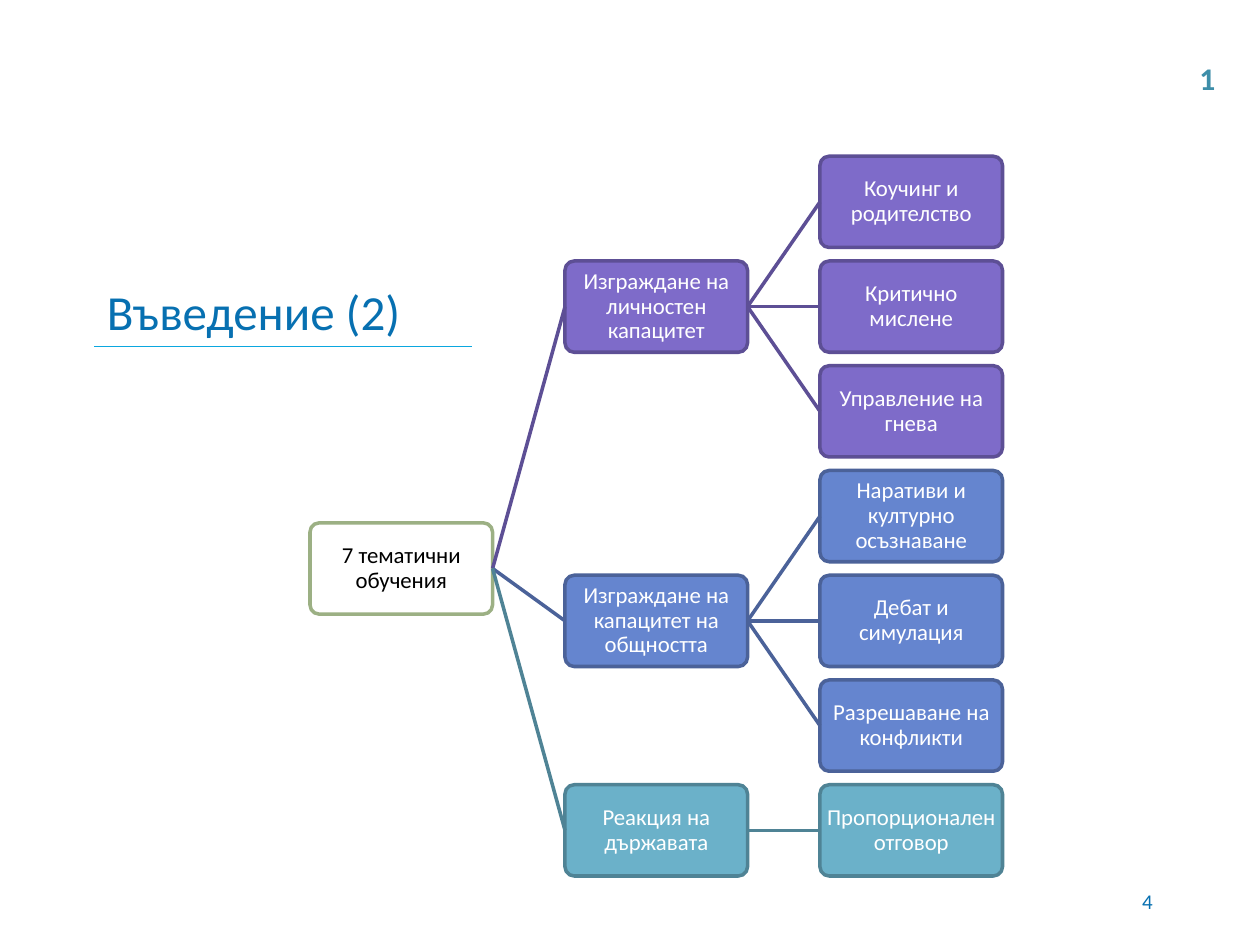
from dataclasses import dataclass

from lxml import etree
from pptx import Presentation
from pptx.dml.color import RGBColor
from pptx.enum.shapes import MSO_CONNECTOR, MSO_SHAPE
from pptx.enum.text import MSO_ANCHOR, MSO_AUTO_SIZE, PP_ALIGN
from pptx.oxml.ns import qn
from pptx.util import Cm, Pt

STRAIGHT = MSO_CONNECTOR.STRAIGHT
ROUNDED = MSO_SHAPE.ROUNDED_RECTANGLE
MIDDLE, BOTTOM = MSO_ANCHOR.MIDDLE, MSO_ANCHOR.BOTTOM
NO_AUTOFIT, FIT_SHAPE = MSO_AUTO_SIZE.NONE, MSO_AUTO_SIZE.SHAPE_TO_FIT_TEXT
LEFT, CENTER, RIGHT = PP_ALIGN.LEFT, PP_ALIGN.CENTER, PP_ALIGN.RIGHT
TITLE_ONLY = 5
LEFT_SIDE, RIGHT_SIDE = 1, 3


@dataclass(frozen=True)
class Theme:
    """Colours, type sizes and line widths of the slide."""
    font: str = "Calibri"
    title_color: str = "0770B1"
    rule_color: str = "0BA7DF"
    marker_color: str = "3E8EA9"
    root: tuple = ("FFFFFF", "9CB084", "000000")
    personal: tuple = ("7E6BC9", "5D4F95", "FFFFFF")
    community: tuple = ("6585CF", "4B6299", "FFFFFF")
    state: tuple = ("6BB1C9", "4F8395", "FFFFFF")
    title_size: float = 28
    marker_size: float = 18
    node_size: float = 13
    number_size: float = 12
    rule_width: float = 0.75
    node_width: float = 2


THEME = Theme()
ROOT_TEXT = "7 тематични обучения"
BRANCHES = [
    ("Изграждане на личностен капацитет", THEME.personal,
     ["Коучинг и родителство", "Критично мислене", "Управление на гнева"]),
    ("Изграждане на капацитет на общността", THEME.community,
     ["Наративи и културно осъзнаване", "Дебат и симулация",
      "Разрешаване на конфликти"]),
    ("Реакция на държавата", THEME.state, ["Пропорционален отговор"]),
]


def place(shape, box):
    """Move a shape to a box of left, top, width and height in centimetres."""
    shape.left, shape.top, shape.width, shape.height = map(Cm, box)


def write(shape, text, size, color, alignment, bold=False):
    """Set the text of a shape and return its paragraph."""
    shape.text_frame.text = text
    paragraph = shape.text_frame.paragraphs[0]
    paragraph.alignment = alignment
    font = paragraph.runs[0].font
    font.name, font.size, font.bold = THEME.font, Pt(size), bold
    font.color.rgb = RGBColor.from_string(color)
    return paragraph


def add_line(slide, start, end, color, width):
    """Draw a straight line without a shadow between two points."""
    line = slide.shapes.add_connector(STRAIGHT, *start, *end)
    line.line.color.rgb = RGBColor.from_string(color)
    line.line.width = Pt(width)
    etree.SubElement(line._element.spPr, qn("a:effectLst"))
    return line


def add_title(slide, box):
    """Place the title and the rule along the bottom of its box."""
    left, top, width, height = box
    title = slide.shapes.title
    place(title, box)
    write(title, "Въведение (2)", THEME.title_size, THEME.title_color, LEFT)
    title.text_frame.vertical_anchor = BOTTOM
    title.text_frame.auto_size = NO_AUTOFIT
    baseline = Cm(top + height)
    add_line(slide, (Cm(left), baseline), (Cm(left + width - 0.1), baseline),
             THEME.rule_color, THEME.rule_width)


def add_node(slide, box, text, colors):
    """Draw one rounded node of the tree."""
    fill, outline, text_color = colors
    node = slide.shapes.add_shape(ROUNDED, *map(Cm, box))
    node.adjustments[0] = 0.1
    node.shadow.inherit = False
    node.fill.solid()
    node.fill.fore_color.rgb = RGBColor.from_string(fill)
    node.line.color.rgb = RGBColor.from_string(outline)
    node.line.width = Pt(THEME.node_width)
    frame = node.text_frame
    frame.word_wrap = True
    frame.vertical_anchor = MIDDLE
    frame.margin_left = frame.margin_right = Cm(0.08)
    frame.margin_top = frame.margin_bottom = Cm(0.08)
    write(node, text, THEME.node_size, text_color, CENTER).line_spacing = 0.9
    return node


def join(slide, parent, child, color):
    """Connect the right side of a parent to the left side of a child."""
    link = add_line(slide, (0, 0), (0, 0), color, THEME.node_width)
    link.begin_connect(parent, RIGHT_SIDE)
    link.end_connect(child, LEFT_SIDE)


def add_tree(slide, box):
    """Lay out the tree, centring each parent on its children."""
    left, top, width, height = box
    node_width, node_height = 3.68, 1.84
    column_step = (width - node_width) / 2
    leaf_count = sum(len(leaves) for _, _, leaves in BRANCHES)
    row_step = (height - node_height) / (leaf_count - 1)

    def node_at(column, row, text, colors):
        """Draw a node at a column and row of the tree."""
        return add_node(slide, (left + column * column_step, top + row * row_step,
                                node_width, node_height), text, colors)

    first_rows, centers = [], []
    next_row = 0
    for _, _, leaves in BRANCHES:
        first_rows.append(next_row)
        centers.append(next_row + (len(leaves) - 1) / 2)
        next_row += len(leaves)

    root = node_at(0, (centers[0] + centers[-1]) / 2, ROOT_TEXT, THEME.root)
    for (text, colors, leaves), first_row, center in zip(BRANCHES, first_rows, centers):
        branch = node_at(1, center, text, colors)
        join(slide, root, branch, colors[1])
        for row, leaf_text in enumerate(leaves, first_row):
            leaf = node_at(2, row, leaf_text, colors)
            join(slide, branch, leaf, colors[1])


def add_slide_number(slide, box):
    """Place the slide number at the bottom right."""
    number = slide.shapes.add_textbox(*map(Cm, box))
    number.text_frame.word_wrap = True
    number.text_frame.vertical_anchor = MIDDLE
    write(number, "4", THEME.number_size, THEME.title_color, RIGHT)


def add_marker(slide, box):
    """Place the bold section marker at the top right."""
    marker = slide.shapes.add_textbox(*map(Cm, box))
    marker.text_frame.word_wrap = False
    marker.text_frame.auto_size = FIT_SHAPE
    write(marker, "1", THEME.marker_size, THEME.marker_color, LEFT, bold=True)


def main():
    """Build and save the presentation."""
    presentation = Presentation()
    presentation.slide_width, presentation.slide_height = Cm(25.4), Cm(19.05)
    slide = presentation.slides.add_slide(presentation.slide_layouts[TITLE_ONLY])
    add_title(slide, (1.9, 4.01, 7.72, 2.97))
    add_slide_number(slide, (18.21, 17.65, 5.28, 1.02))
    add_tree(slide, (6.25, 3.15, 13.96, 14.51))
    add_marker(slide, (23.93, 1.07, 0.84, 1.02))
    presentation.save("out.pptx")


if __name__ == "__main__":
    main()
